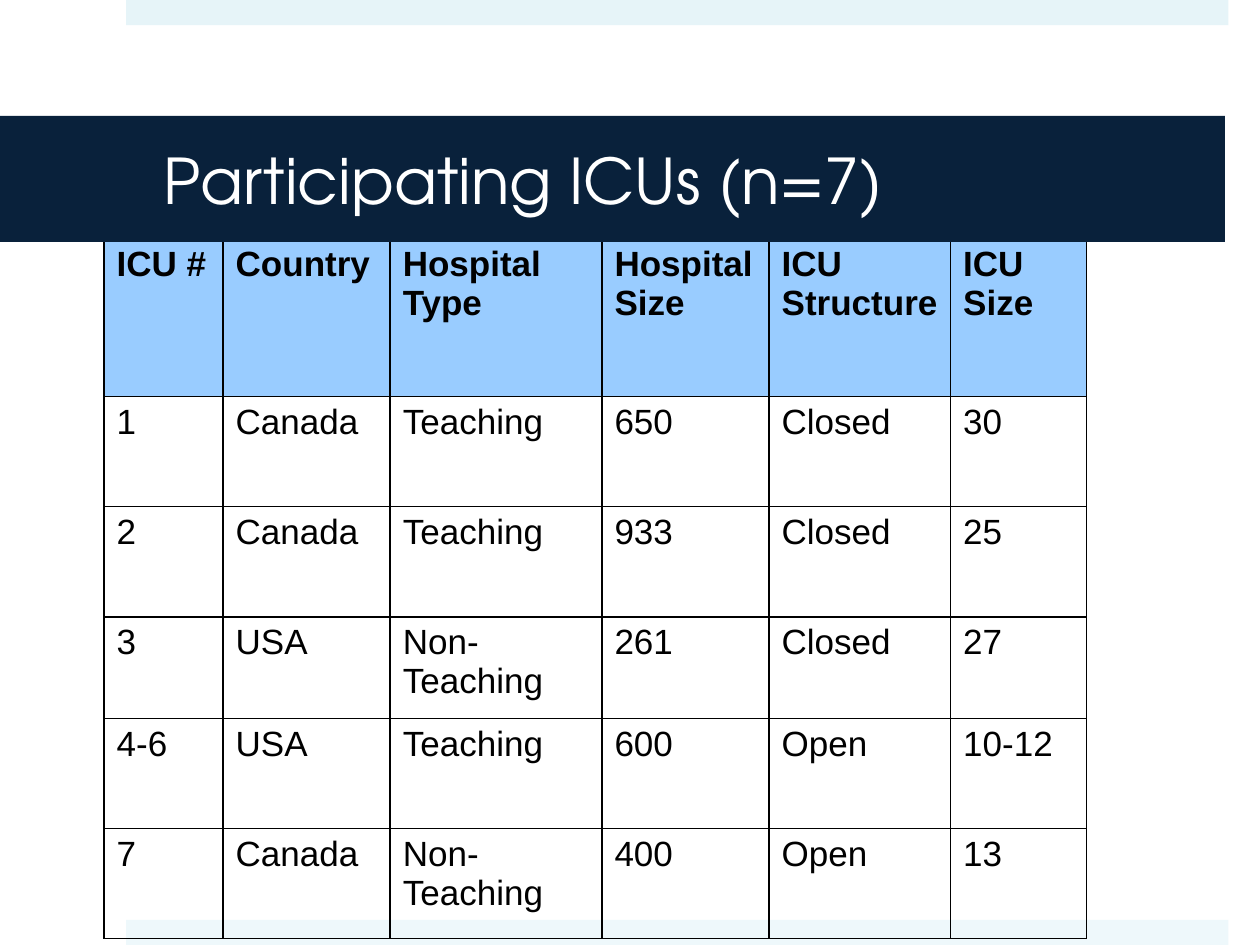
"""Build the slide that lists the participating intensive care units."""
from dataclasses import dataclass

from lxml.etree import SubElement
from pptx import Presentation
from pptx.dml.color import RGBColor as Color
from pptx.enum.shapes import MSO_SHAPE as Shape
from pptx.enum.text import MSO_ANCHOR as Anchor, PP_ALIGN as Align
from pptx.oxml.ns import qn
from pptx.util import Pt


@dataclass(frozen=True)
class Theme:
    title_font: str = "TeX Gyre Adventor"
    body_font: str = "Arial"
    title_size: int = 36
    body_size: int = 20
    navy: str = "09213B"
    white: str = "FFFFFF"
    black: str = "000000"
    header: str = "99CCFF"
    top_strip: str = "E6F4F8"
    bottom_strip: str = "EEF8FB"


THEME = Theme()
SLIDE_WIDTH, SLIDE_HEIGHT = 720, 540
TITLE = "Participating ICUs (n=7)"
TITLE_BOX = (0, 66.25, 700, 72)
TITLE_MARGINS = (93.6, 3.6, 21.6, 3.6)
STRIP_LEFT, STRIP_WIDTH, STRIP_HEIGHT = 72, 630, 14.4
STRIPS = [(0, THEME.top_strip), (SLIDE_HEIGHT - STRIP_HEIGHT, THEME.bottom_strip)]
TABLE_LEFT, TABLE_TOP = 59.5, 136
COLUMN_WIDTHS = [68, 95.5, 121, 95.5, 103.75, 77.75]
ROW_HEIGHTS = [90.5, 63, 63, 58, 63, 63]
ROWS = [
    ("ICU #", "Country", "Hospital Type", "Hospital Size", "ICU Structure", "ICU Size"),
    ("1", "Canada", "Teaching", "650", "Closed", "30"),
    ("2", "Canada", "Teaching", "933", "Closed", "25"),
    ("3", "USA", "Non-Teaching", "261", "Closed", "27"),
    ("4-6", "USA", "Teaching", "600", "Open", "10-12"),
    ("7", "Canada", "Non-Teaching", "400", "Open", "13"),
]


def write_text(frame, text, *, font, size, color, bold=False):
    frame.text = text
    frame.word_wrap = True
    paragraph = frame.paragraphs[0]
    paragraph.alignment = Align.LEFT
    run_font = paragraph.runs[0].font
    run_font.name, run_font.size, run_font.bold = font, Pt(size), bold
    run_font.color.rgb = Color.from_string(color)


def set_fill(target, color):
    target.fill.solid()
    target.fill.fore_color.rgb = Color.from_string(color)


def add_borders(cell, color, width=1):
    properties = cell._tc.get_or_add_tcPr()
    for index, side in enumerate(("lnL", "lnR", "lnT", "lnB")):
        line = properties.makeelement(qn(f"a:{side}"), {"w": str(Pt(width))})
        properties.insert(index, line)
        fill = SubElement(line, qn("a:solidFill"))
        SubElement(fill, qn("a:srgbClr"), val=color)


def add_strip(slide, top, color):
    box = (STRIP_LEFT, top, STRIP_WIDTH, STRIP_HEIGHT)
    shape = slide.shapes.add_shape(Shape.RECTANGLE, *map(Pt, box))
    shape.shadow.inherit = False
    set_fill(shape, color)
    shape.line.fill.background()


def add_unit_table(slide):
    table = slide.shapes.add_table(
        len(ROWS), len(COLUMN_WIDTHS), Pt(TABLE_LEFT), Pt(TABLE_TOP),
        Pt(sum(COLUMN_WIDTHS)), Pt(sum(ROW_HEIGHTS))).table
    table.first_row = table.horz_banding = False
    for column, width in zip(table.columns, COLUMN_WIDTHS):
        column.width = Pt(width)
    for index, (row, height, values) in enumerate(zip(table.rows, ROW_HEIGHTS, ROWS)):
        row.height = Pt(height)
        is_header = index == 0
        for cell, value in zip(row.cells, values):
            write_text(cell.text_frame, value, font=THEME.body_font,
                       size=THEME.body_size, color=THEME.black, bold=is_header)
            if is_header:
                set_fill(cell, THEME.header)
            else:
                cell.fill.background()
            add_borders(cell, THEME.black)


def place_title(slide):
    title = slide.shapes.title
    title.left, title.top, title.width, title.height = map(Pt, TITLE_BOX)
    set_fill(title, THEME.navy)
    frame = title.text_frame
    (frame.margin_left, frame.margin_top,
     frame.margin_right, frame.margin_bottom) = map(Pt, TITLE_MARGINS)
    frame.vertical_anchor = Anchor.MIDDLE
    write_text(frame, TITLE, font=THEME.title_font,
               size=THEME.title_size, color=THEME.white)
    title.element.getparent().append(title.element)


def main():
    presentation = Presentation()
    presentation.slide_width, presentation.slide_height = Pt(SLIDE_WIDTH), Pt(SLIDE_HEIGHT)
    slide = presentation.slides.add_slide(presentation.slide_layouts[5])
    set_fill(slide.background, THEME.white)
    for top, color in STRIPS:
        add_strip(slide, top, color)
    add_unit_table(slide)
    place_title(slide)
    presentation.save("out.pptx")


if __name__ == "__main__":
    main()
